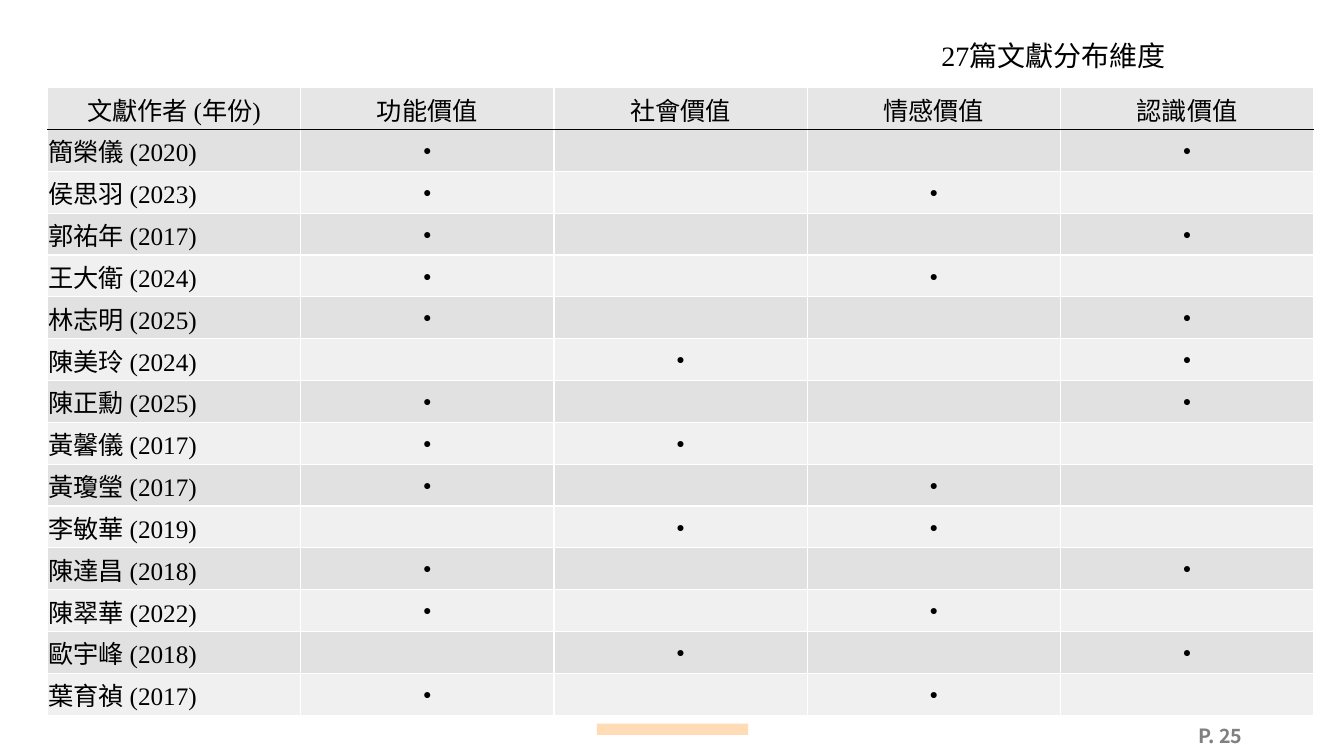
from dataclasses import dataclass
from lxml.etree import SubElement
from pptx import Presentation
from pptx.dml.color import RGBColor
from pptx.enum.shapes import MSO_SHAPE
from pptx.enum.text import MSO_ANCHOR, MSO_AUTO_SIZE, PP_ALIGN
from pptx.oxml import parse_xml
from pptx.oxml.ns import nsdecls, qn
from pptx.slide import Slide
from pptx.table import _Cell
from pptx.text.text import TextFrame
from pptx.util import Inches, Pt


@dataclass(frozen=True)
class Theme:
    serif: str = "Times New Roman"
    sans: str = "Noto Sans CJK TC"
    ink: str = "000000"
    gray: str = "808080"
    line: str = "FFFFFF"
    head: str = "E7E6E6"
    odd: str = "E1E1E1"
    even: str = "F0F0F0"
    accent: str = "FFDCB5"
    title: int = 20
    body: int = 18
    page: int = 14
    dot: int = 10


@dataclass(frozen=True)
class Style:
    font: str
    size: int
    color: str
    align: PP_ALIGN
    bold: bool = False


@dataclass(frozen=True)
class Paper:
    author: str
    values: tuple[str, ...]


THEME = Theme()
TITLE = Style(THEME.serif, THEME.title, THEME.ink, PP_ALIGN.CENTER)
HEAD = Style(THEME.serif, THEME.body, THEME.ink, PP_ALIGN.CENTER)
NAME = Style(THEME.serif, THEME.body, THEME.ink, PP_ALIGN.LEFT)
DOT = Style(THEME.serif, THEME.dot, THEME.ink, PP_ALIGN.CENTER)
PAGE = Style(THEME.sans, THEME.page, THEME.gray, PP_ALIGN.RIGHT, True)

USE, SOCIAL, FEEL, KNOW = VALUES = ("功能價值", "社會價值", "情感價值", "認識價值")
PAPERS = (
    Paper("簡榮儀 (2020)", (USE, KNOW)),
    Paper("侯思羽 (2023)", (USE, FEEL)),
    Paper("郭祐年 (2017)", (USE, KNOW)),
    Paper("王大衛 (2024)", (USE, FEEL)),
    Paper("林志明 (2025)", (USE, KNOW)),
    Paper("陳美玲 (2024)", (SOCIAL, KNOW)),
    Paper("陳正勳 (2025)", (USE, KNOW)),
    Paper("黃馨儀 (2017)", (USE, SOCIAL)),
    Paper("黃瓊瑩 (2017)", (USE, FEEL)),
    Paper("李敏華 (2019)", (SOCIAL, FEEL)),
    Paper("陳達昌 (2018)", (USE, KNOW)),
    Paper("陳翠華 (2022)", (USE, FEEL)),
    Paper("歐宇峰 (2018)", (SOCIAL, KNOW)),
    Paper("葉育禎 (2017)", (USE, FEEL)),
)


def write(frame: TextFrame, text: str, style: Style) -> None:
    frame.text = text
    line = frame.paragraphs[0]
    line.alignment = style.align
    for run in line.runs:
        font = run.font
        font.name = style.font
        font.size = Pt(style.size)
        font.bold = style.bold
        font.color.rgb = RGBColor.from_string(style.color)
        asian = SubElement(font._element, qn("a:ea"))
        asian.set("typeface", THEME.sans)


def border(cell: _Cell, row: int) -> None:
    colors = {"L": THEME.line, "R": THEME.line,
              "T": THEME.ink if row == 1 else THEME.line,
              "B": THEME.ink if row == 0 else THEME.line}
    props = cell._tc.get_or_add_tcPr()
    for index, (side, color) in enumerate(colors.items()):
        props.insert(index, parse_xml(
            f'<a:ln{side} {nsdecls("a")} w="{Pt(1)}"><a:solidFill>'
            f'<a:srgbClr val="{color}"/></a:solidFill></a:ln{side}>'))


def fill(cell: _Cell, row: int, text: str, style: Style) -> None:
    write(cell.text_frame, text, style)
    cell.vertical_anchor = MSO_ANCHOR.MIDDLE
    cell.margin_left = cell.margin_right = cell.margin_top = Inches(0.01)
    cell.margin_bottom = 0
    shade = THEME.odd if row % 2 else THEME.even
    cell.fill.solid()
    cell.fill.fore_color.rgb = RGBColor.from_string(shade if row else THEME.head)
    border(cell, row)


def draw_title(slide: Slide) -> None:
    title = slide.shapes.title
    title.left, title.top = Inches(9), Inches(0.35)
    title.width, title.height = Inches(2.9), Inches(0.43)
    frame = title.text_frame
    frame.auto_size = MSO_AUTO_SIZE.NONE
    frame.vertical_anchor = MSO_ANCHOR.MIDDLE
    write(frame, "27篇文獻分布維度", TITLE)
    frame.paragraphs[0].line_spacing = 0.9


def draw_table(slide: Slide) -> None:
    grid = slide.shapes.add_table(
        len(PAPERS) + 1, len(VALUES) + 1,
        Inches(0.47), Inches(0.87), Inches(12.56), Inches(6.23)).table
    for col, text in enumerate(("文獻作者 (年份)", *VALUES)):
        fill(grid.cell(0, col), 0, text, HEAD)
    for row, paper in enumerate(PAPERS, 1):
        fill(grid.cell(row, 0), row, paper.author, NAME)
        for col, value in enumerate(VALUES, 1):
            mark = "●" if value in paper.values else ""
            fill(grid.cell(row, col), row, mark, DOT)


def draw_foot(slide: Slide) -> None:
    bar = slide.shapes.add_shape(
        MSO_SHAPE.RECTANGLE, Inches(5.92), Inches(7.18), Inches(1.5), Inches(0.11))
    bar.shadow.inherit = False
    bar.fill.solid()
    bar.fill.fore_color.rgb = RGBColor.from_string(THEME.accent)
    bar.line.fill.background()
    page = slide.shapes.add_textbox(
        Inches(9.42), Inches(7.1), Inches(3), Inches(0.4)).text_frame
    page.word_wrap = True
    page.vertical_anchor = MSO_ANCHOR.MIDDLE
    write(page, "P. 25", PAGE)


def main() -> None:
    deck = Presentation()
    deck.slide_width, deck.slide_height = Inches(13.33), Inches(7.5)
    slide = deck.slides.add_slide(deck.slide_layouts.get_by_name("Title Only"))
    draw_title(slide)
    draw_table(slide)
    draw_foot(slide)
    deck.save("out.pptx")


if __name__ == "__main__":
    main()
